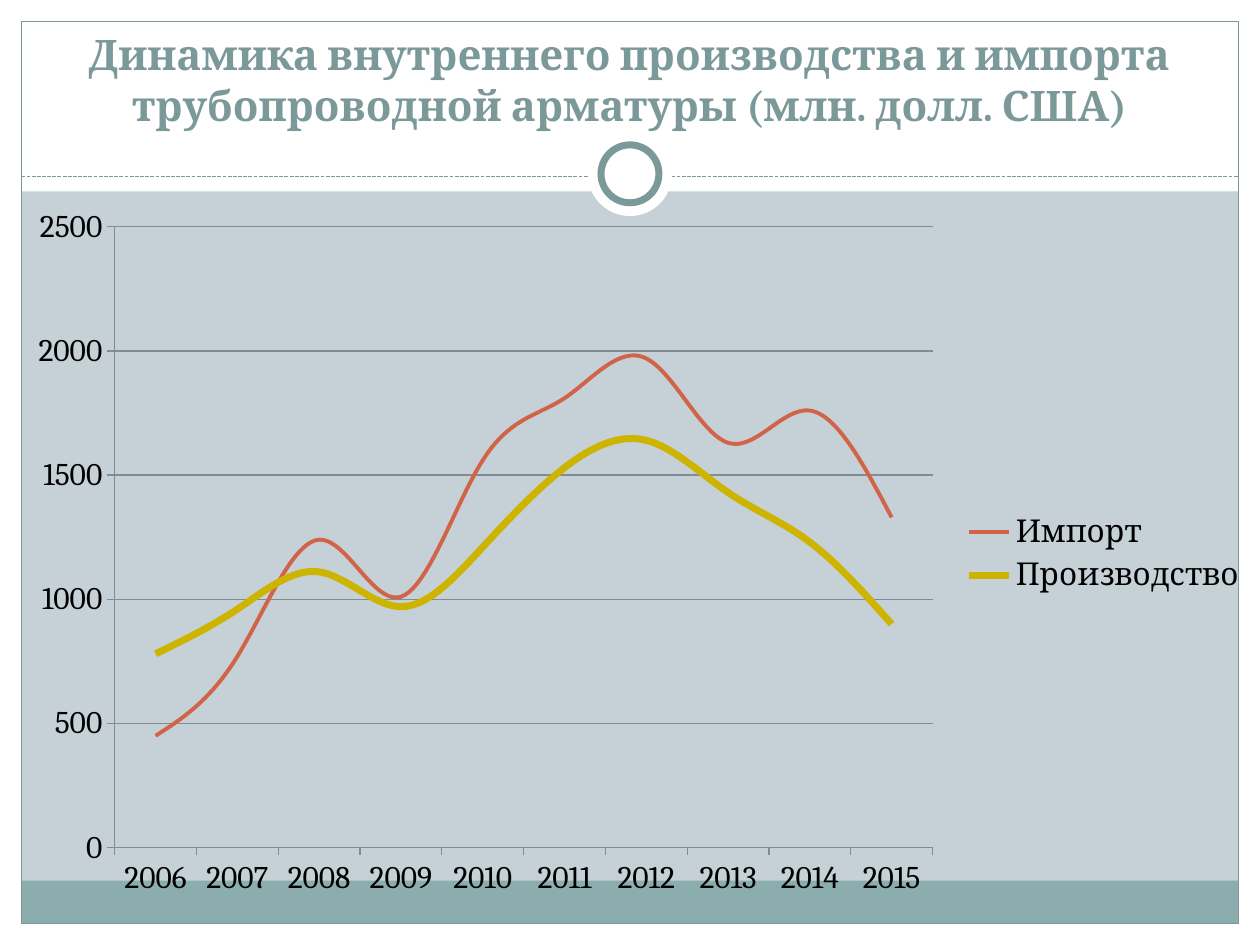
from lxml import etree
from pptx import Presentation
from pptx.chart.data import CategoryChartData
from pptx.dml.color import RGBColor
from pptx.enum.chart import XL_CHART_TYPE, XL_LEGEND_POSITION, XL_TICK_MARK
from pptx.enum.dml import MSO_LINE
from pptx.enum.shapes import MSO_CONNECTOR, MSO_SHAPE
from pptx.enum.text import MSO_ANCHOR, PP_ALIGN
from pptx.oxml.ns import qn
from pptx.util import Inches, Pt

RECTANGLE, OVAL = MSO_SHAPE.RECTANGLE, MSO_SHAPE.OVAL
STRAIGHT, DASH = MSO_CONNECTOR.STRAIGHT, MSO_LINE.SQUARE_DOT
SMOOTH_LINE, RIGHT = XL_CHART_TYPE.LINE, XL_LEGEND_POSITION.RIGHT
OUTSIDE, NO_TICK = XL_TICK_MARK.OUTSIDE, XL_TICK_MARK.NONE
BOTTOM, CENTER = MSO_ANCHOR.BOTTOM, PP_ALIGN.CENTER

WIDTH, HEIGHT, MARGIN = 10, 7.5, 0.17
HEADER, RULE_Y = 1.52, 1.4
FONT = "Cambria"
WHITE, BLACK, SAGE, BAND = "FFFFFF", "000000", "7C999A", "8CADAE"
BACKGROUND, GRID = "C5D1D7", "808B94"
YEARS = [str(year) for year in range(2006, 2016)]
SERIES = [
    ("Импорт", [450, 770, 1240, 1010, 1560, 1810, 1970, 1630, 1760, 1330], "D16349", 2.25),
    ("Производство", [780, 960, 1110, 970, 1210, 1530, 1640, 1430, 1230, 900], "CCB400", 4),
]
PLOT_SHARES = {"x": 0.08, "y": 0.044, "w": 0.657, "h": 0.866}


def color(value):
    return RGBColor.from_string(value)


def inches(box):
    return [Inches(length) for length in box]


def style_font(font, size, value, bold=False):
    font.name, font.size, font.bold = FONT, Pt(size), bold
    font.color.rgb = color(value)


def style_line(line, value, width):
    line.color.rgb = color(value)
    line.width = Pt(width)


def add_block(page, kind, box, fill=None, outline=None, width=0.75):
    block = page.shapes.add_shape(kind, *inches(box))
    block.shadow.inherit = False
    if fill:
        block.fill.solid()
        block.fill.fore_color.rgb = color(fill)
    else:
        block.fill.background()
    if outline:
        style_line(block.line, outline, width)
    else:
        block.line.fill.background()


def add_frame(page, box):
    left, top, width, height = box
    right, bottom = left + width, top + height
    inner = width - 2 * MARGIN
    for edge in (
        (left, bottom - MARGIN, width, MARGIN),
        (left, top, width, HEADER),
        (left, top, MARGIN, height),
        (right - MARGIN, top, MARGIN, height),
    ):
        add_block(page, RECTANGLE, edge, WHITE)
    add_block(page, RECTANGLE, (left + MARGIN, bottom - 3 * MARGIN, inner, 2 * MARGIN), BAND)
    add_block(page, RECTANGLE, (left + MARGIN, top + MARGIN, inner, height - 2 * MARGIN), outline=SAGE)


def add_divider(page, left, right, y, ring_y):
    rule = page.shapes.add_connector(STRAIGHT, *inches((left, y, right, y)))
    style_line(rule.line, SAGE, 0.75)
    rule.line.dash_style = DASH
    etree.SubElement(rule._element.spPr, qn("a:effectLst"))
    middle = (left + right) / 2
    for size, outline in ((0.67, None), (0.46, SAGE)):
        box = (middle - size / 2, ring_y - size / 2, size, size)
        add_block(page, OVAL, box, WHITE, outline, 4)


def place_title(page, box):
    title = page.shapes.title
    title.left, title.top, title.width, title.height = inches(box)
    title.element.getparent().append(title.element)
    frame = title.text_frame
    frame.text = "Динамика внутреннего производства и импорта трубопроводной арматуры (млн. долл. США)"
    frame.word_wrap = True
    frame.vertical_anchor = BOTTOM
    para = frame.paragraphs[0]
    para.alignment = CENTER
    style_font(para.font, 24, SAGE, True)


def fix_plot_area(chart):
    area = chart._chartSpace.chart.plotArea
    for old in area.findall(qn("c:layout")):
        area.remove(old)
    layout = etree.Element(qn("c:layout"))
    manual = etree.SubElement(layout, qn("c:manualLayout"))
    settings = {"layoutTarget": "inner", "xMode": "edge", "yMode": "edge", **PLOT_SHARES}
    for name, value in settings.items():
        etree.SubElement(manual, qn(f"c:{name}")).set("val", str(value))
    area.insert(0, layout)


def add_trend_chart(page, box):
    data = CategoryChartData()
    data.categories = YEARS
    for name, values, _, _ in SERIES:
        data.add_series(name, values)
    chart = page.shapes.add_chart(SMOOTH_LINE, *inches(box), data).chart
    style_font(chart.font, 18, BLACK)
    chart.has_title = False
    chart.has_legend = True
    chart.legend.position = RIGHT
    chart.legend.include_in_layout = False
    chart.plots[0].vary_by_categories = False
    for series, (_, _, value, width) in zip(chart.plots[0].series, SERIES):
        series.smooth = True
        style_line(series.format.line, value, width)
    for axis in (chart.category_axis, chart.value_axis):
        axis.major_tick_mark, axis.minor_tick_mark = OUTSIDE, NO_TICK
        style_line(axis.format.line, GRID, 0.75)
    scale = chart.value_axis
    scale.minimum_scale, scale.maximum_scale, scale.major_unit = 0, 2500, 500
    scale.has_major_gridlines = True
    style_line(scale.major_gridlines.format.line, GRID, 0.75)
    fix_plot_area(chart)


def main():
    deck = Presentation()
    deck.slide_width, deck.slide_height = Inches(WIDTH), Inches(HEIGHT)
    page = deck.slides.add_slide(deck.slide_layouts[5])
    page.background.fill.solid()
    page.background.fill.fore_color.rgb = color(BACKGROUND)
    add_frame(page, (0, 0, WIDTH, HEIGHT))
    add_divider(page, MARGIN, WIDTH - MARGIN, RULE_Y, 1.38)
    place_title(page, (0.33, 0.25, 9.33, 0.83))
    add_trend_chart(page, (0.12, 1.55, 9.88, 5.69))
    deck.save("out.pptx")


if __name__ == "__main__":
    main()
